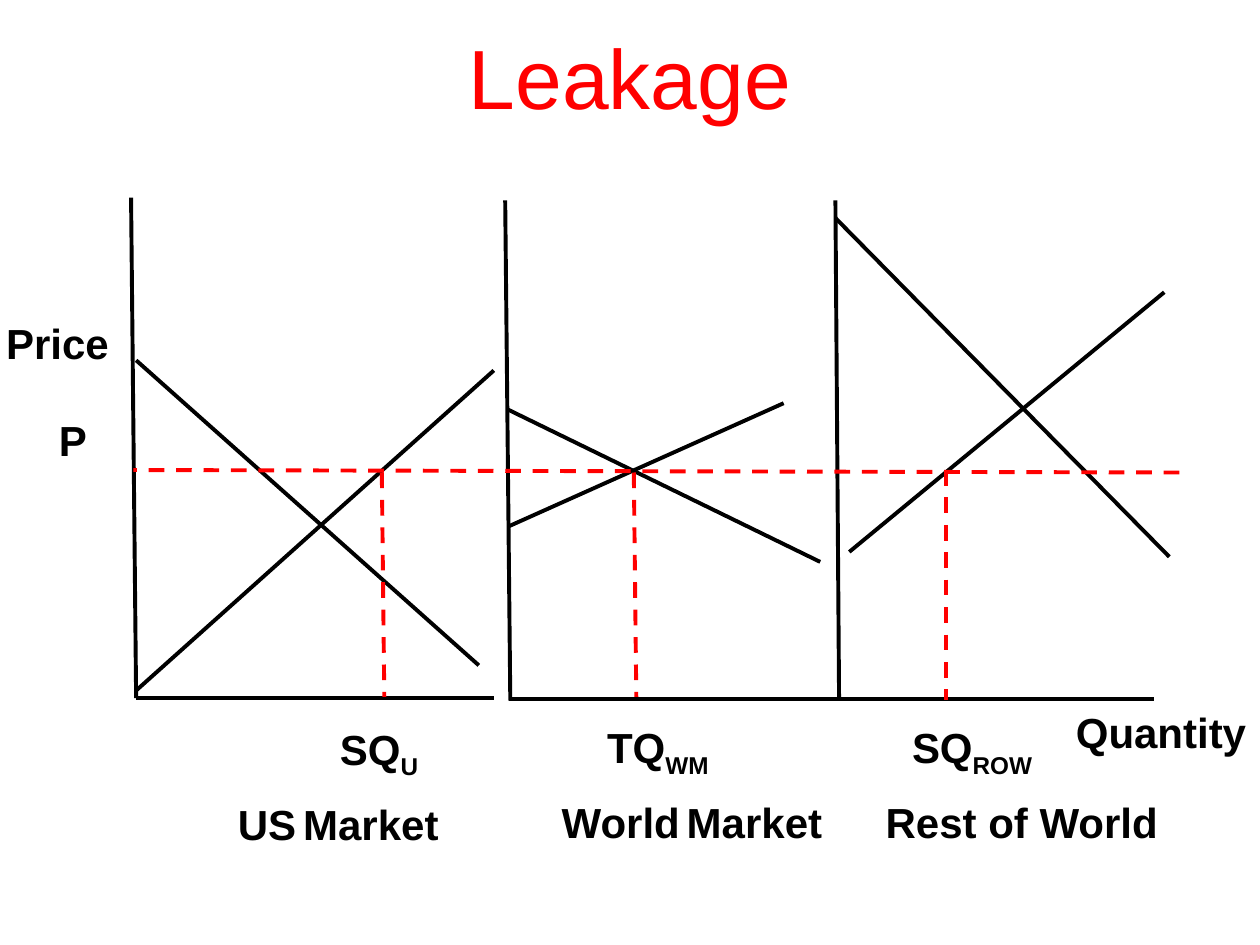
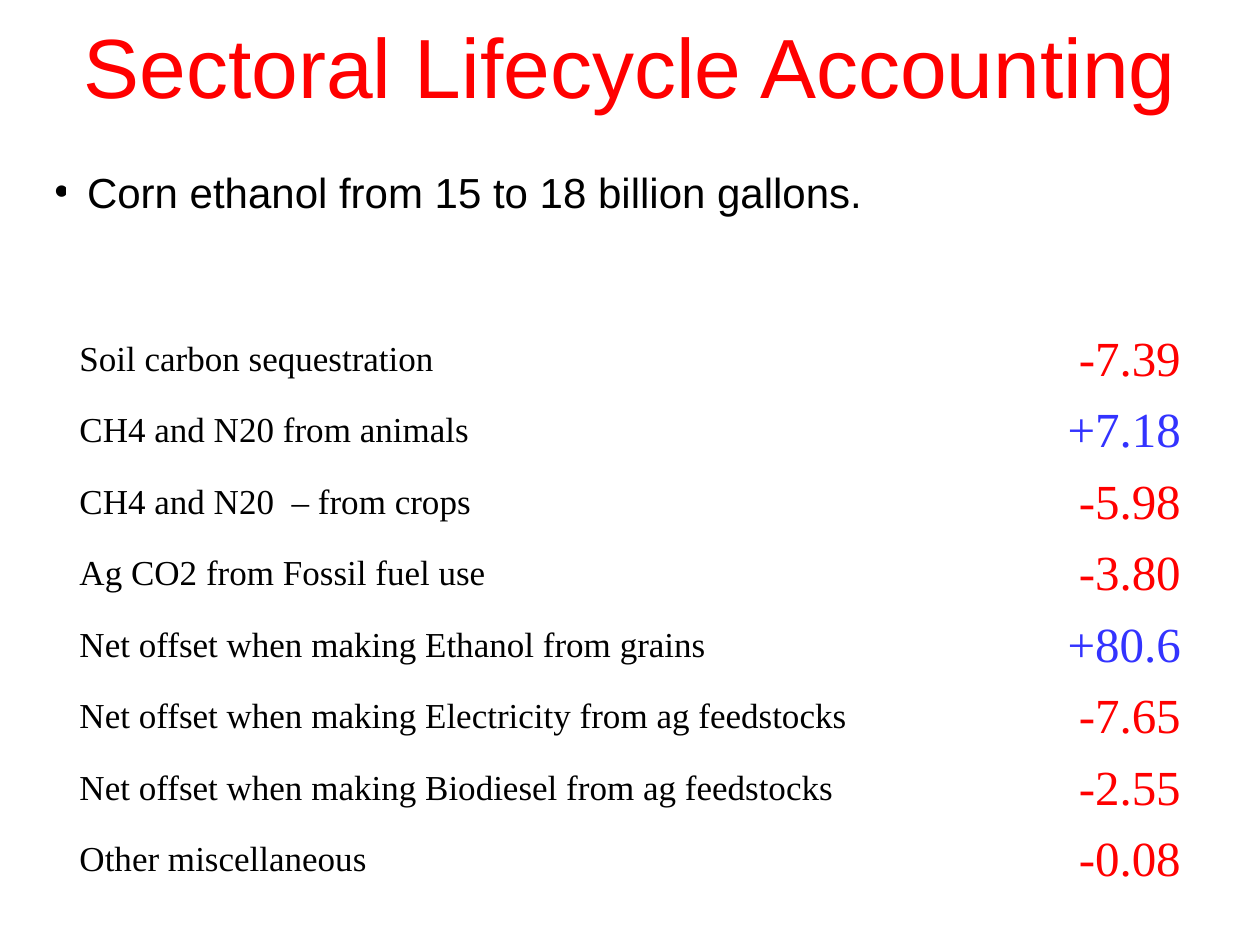
from dataclasses import dataclass

from lxml import etree
from pptx import Presentation
from pptx.dml.color import RGBColor
from pptx.enum import dml, shapes, text
from pptx.oxml import ns
from pptx.util import Pt


@dataclass(frozen=True)
class Theme:
    red: RGBColor = RGBColor(0xFF, 0x00, 0x00)
    blue: RGBColor = RGBColor(0x33, 0x33, 0xFF)
    black: RGBColor = RGBColor(0x00, 0x00, 0x00)
    sans: str = "Arial"
    serif: str = "Times New Roman"
    title: int = 48
    label: int = 24
    source: int = 20
    amount: int = 28
    narrow_space: int = 14
    stroke: float = 2.25


THEME = Theme()
TITLE_LEFT, TITLE_WIDTH = 21, 678
LABEL_HEIGHT = 36


@dataclass(frozen=True)
class Market:
    """One supply and demand diagram; lines are x1, y1, x2, y2 in points."""
    price_axis: tuple
    quantity_axis: tuple
    demand: tuple
    supply: tuple
    quantity_drop: tuple
    quantity: tuple   # symbol, subscript, left, top, width
    name: tuple       # words, left, top, width


MARKETS = [
    Market((74.9, 113, 77.8, 398.9), (77.8, 398.9, 282.2, 398.9),
           (77.8, 205.9, 273.6, 380.2), (77.8, 394.6, 282.2, 211.7),
           (218.2, 270, 219.6, 398.2),
           ("SQ", "U", 187.2, 409.7, 60.5),
           (("US", "Market"), 128.9, 452.9, 129.6)),
    Market((288.7, 114.5, 291.6, 400.3), (290.9, 399.6, 495.4, 399.6),
           (290.2, 234, 468.7, 321.1), (290.2, 301, 447.8, 230.4),
           (362.2, 270, 363.6, 398.2),
           ("TQ", "WM", 339.8, 409, 101.5),
           (("World", "Market"), 313.9, 451.4, 163.4)),
    Market((477.4, 114.5, 479.5, 400.3), (478.8, 399.6, 659.5, 399.6),
           (477.4, 124.6, 668.2, 318.2), (485.3, 315.4, 665.3, 167),
           (540.7, 268.6, 540.7, 400.3),
           ("SQ", "ROW", 514.1, 409, 88.6),
           (("Rest of World",), 499, 451.4, 170.6)),
]
PRICE_LINE = (673.9, 270, 76.3, 268.6)
AXIS_LABELS = [("Price", -3.6, 177.8, 73.4), ("P", 26.6, 233.3, 30.2),
               ("Quantity", 607.7, 400.3, 111.6)]

EMISSION_CHANGES = [
    ("Soil carbon sequestration", "-7.39"),
    ("CH4 and N20 from animals", "+7.18"),
    ("CH4 and N20  – from crops", "-5.98"),
    ("Ag CO2 from Fossil fuel use", "-3.80"),
    ("Net offset when making Ethanol from grains", "+80.6"),
    ("Net offset when making Electricity from ag feedstocks", "-7.65"),
    ("Net offset when making Biodiesel from ag feedstocks", "-2.55"),
    ("Other miscellaneous", "-0.08"),
]
HEADING_ROWS = (31, 59.8)
CHANGE_ROW = 40.85
TABLE_COLUMNS = (544.3, 99.4)


def style(run, size, color=THEME.black, font=THEME.sans, bold=False):
    run.font.size, run.font.name, run.font.bold = Pt(size), font, bold
    run.font.color.rgb = color


def place(part, left, top, width, height):
    part.left, part.top = Pt(left), Pt(top)
    part.width, part.height = Pt(width), Pt(height)


def add_title(slide, words, top, height):
    title = slide.shapes.title
    place(title, TITLE_LEFT, top, TITLE_WIDTH, height)
    frame = title.text_frame
    frame.text = words
    frame.auto_size = text.MSO_AUTO_SIZE.NONE
    frame.vertical_anchor = text.MSO_ANCHOR.MIDDLE
    heading = frame.paragraphs[0]
    heading.alignment = text.PP_ALIGN.CENTER
    style(heading.runs[0], THEME.title, THEME.red)


def add_line(diagram, ends, color=THEME.black, dashed=False):
    line = diagram.shapes.add_connector(
        shapes.MSO_CONNECTOR.STRAIGHT, *(Pt(end) for end in ends))
    line.line.color.rgb = color
    line.line.width = Pt(THEME.stroke)
    if dashed:
        line.line.dash_style = dml.MSO_LINE.DASH
    etree.SubElement(line._element.spPr, ns.qn("a:effectLst"))


def add_label(diagram, pieces, left, top, width):
    """Add a bold label from (words, size, is_subscript) pieces."""
    label = diagram.shapes.add_textbox(
        Pt(left), Pt(top), Pt(width), Pt(LABEL_HEIGHT))
    frame = label.text_frame
    frame.word_wrap = False
    frame.auto_size = text.MSO_AUTO_SIZE.SHAPE_TO_FIT_TEXT
    for words, size, is_subscript in pieces:
        run = frame.paragraphs[0].add_run()
        run.text = words
        style(run, size, bold=True)
        if is_subscript:
            run._r.get_or_add_rPr().set("baseline", "-25000")


def add_market(diagram, market):
    for ends in (market.price_axis, market.quantity_axis,
                 market.demand, market.supply):
        add_line(diagram, ends)
    add_line(diagram, market.quantity_drop, THEME.red, dashed=True)

    symbol, subscript, *spot = market.quantity
    add_label(diagram, [(symbol, THEME.label, False),
                        (subscript, THEME.label, True)], *spot)

    words, *spot = market.name
    pieces = [(words[0], THEME.label, False)]
    for word in words[1:]:
        pieces += [(" ", THEME.narrow_space, False),
                   (word, THEME.label, False)]
    add_label(diagram, pieces, *spot)


def add_bullet(body, words):
    place(body, 23.8, 91.4, 672.5, 64.8)
    frame = body.text_frame
    frame.text = words
    frame.auto_size = text.MSO_AUTO_SIZE.NONE
    frame.vertical_anchor = text.MSO_ANCHOR.TOP
    item = frame.paragraphs[0]
    item.space_before = Pt(0)
    style(item.runs[0], THEME.label)
    # Hanging bullet
    layout = item._p.get_or_add_pPr()
    layout.set("marL", str(Pt(18.72)))
    layout.set("indent", str(Pt(-18.72)))
    etree.SubElement(layout, ns.qn("a:buChar")).set("char", "•")


def fill_cell(cell, words, size, color, alignment):
    cell.text = words
    cell.vertical_anchor = text.MSO_ANCHOR.MIDDLE
    entry = cell.text_frame.paragraphs[0]
    entry.alignment = alignment
    style(entry.runs[0], size, color, THEME.serif)


def add_change_table(slide, changes):
    heights = [*HEADING_ROWS, *[CHANGE_ROW] * len(changes)]
    table = slide.shapes.add_table(
        len(heights), len(TABLE_COLUMNS), Pt(38.2), Pt(94.3),
        Pt(sum(TABLE_COLUMNS)), Pt(sum(heights))).table
    table.first_row = table.horz_banding = False
    for column, width in zip(table.columns, TABLE_COLUMNS):
        column.width = Pt(width)
    for row, height in zip(table.rows, heights):
        row.height = Pt(height)
    for cell in table.iter_cells():
        cell.fill.background()
    table.cell(0, 1).merge(table.cell(1, 1))

    # Sources on the left, signed amounts on the right
    for row, (source, amount) in enumerate(changes, len(HEADING_ROWS)):
        fill_cell(table.cell(row, 0), source, THEME.source, THEME.black,
                  text.PP_ALIGN.LEFT)
        sign_color = THEME.blue if amount.startswith("+") else THEME.red
        fill_cell(table.cell(row, 1), amount, THEME.amount, sign_color,
                  text.PP_ALIGN.RIGHT)


def build_leakage(deck):
    slide = deck.slides.add_slide(deck.slide_layouts.get_by_name("Title Only"))
    add_title(slide, "Leakage", -5, 96.5)
    diagram = slide.shapes.add_group_shape()
    for market in MARKETS:
        add_market(diagram, market)
    # Price shared by the three markets
    add_line(diagram, PRICE_LINE, THEME.red, dashed=True)
    for words, *spot in AXIS_LABELS:
        add_label(diagram, [(words, THEME.label, False)], *spot)


def build_accounting(deck):
    slide = deck.slides.add_slide(
        deck.slide_layouts.get_by_name("Title and Content"))
    add_title(slide, "Sectoral Lifecycle Accounting", -59.8, 193.7)
    add_bullet(slide.placeholders[1],
               "Corn ethanol from 15 to 18 billion gallons.")
    add_change_table(slide, EMISSION_CHANGES)


def main():
    deck = Presentation()
    deck.slide_width, deck.slide_height = Pt(720), Pt(540)
    build_leakage(deck)
    build_accounting(deck)
    deck.save("out.pptx")


if __name__ == "__main__":
    main()
